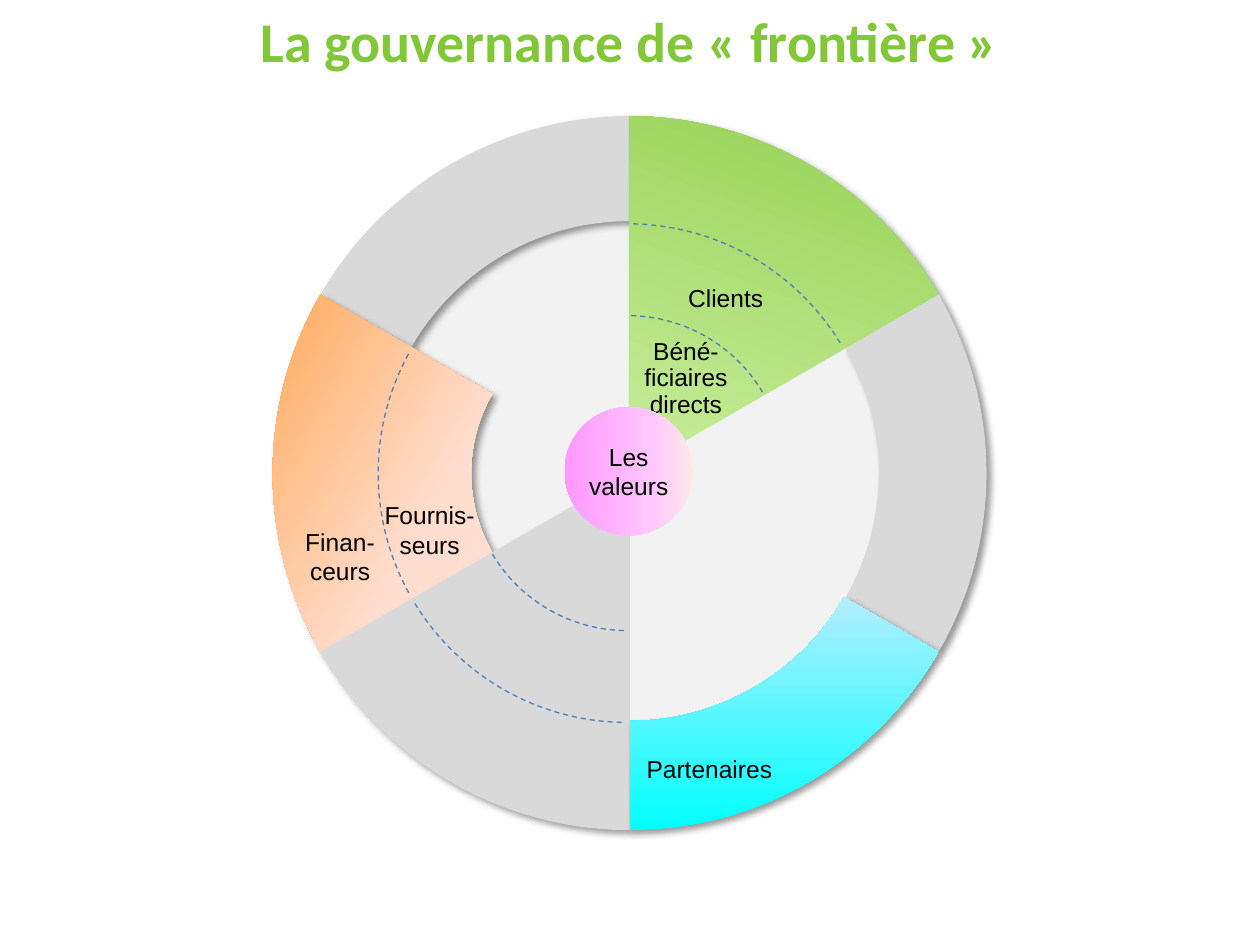
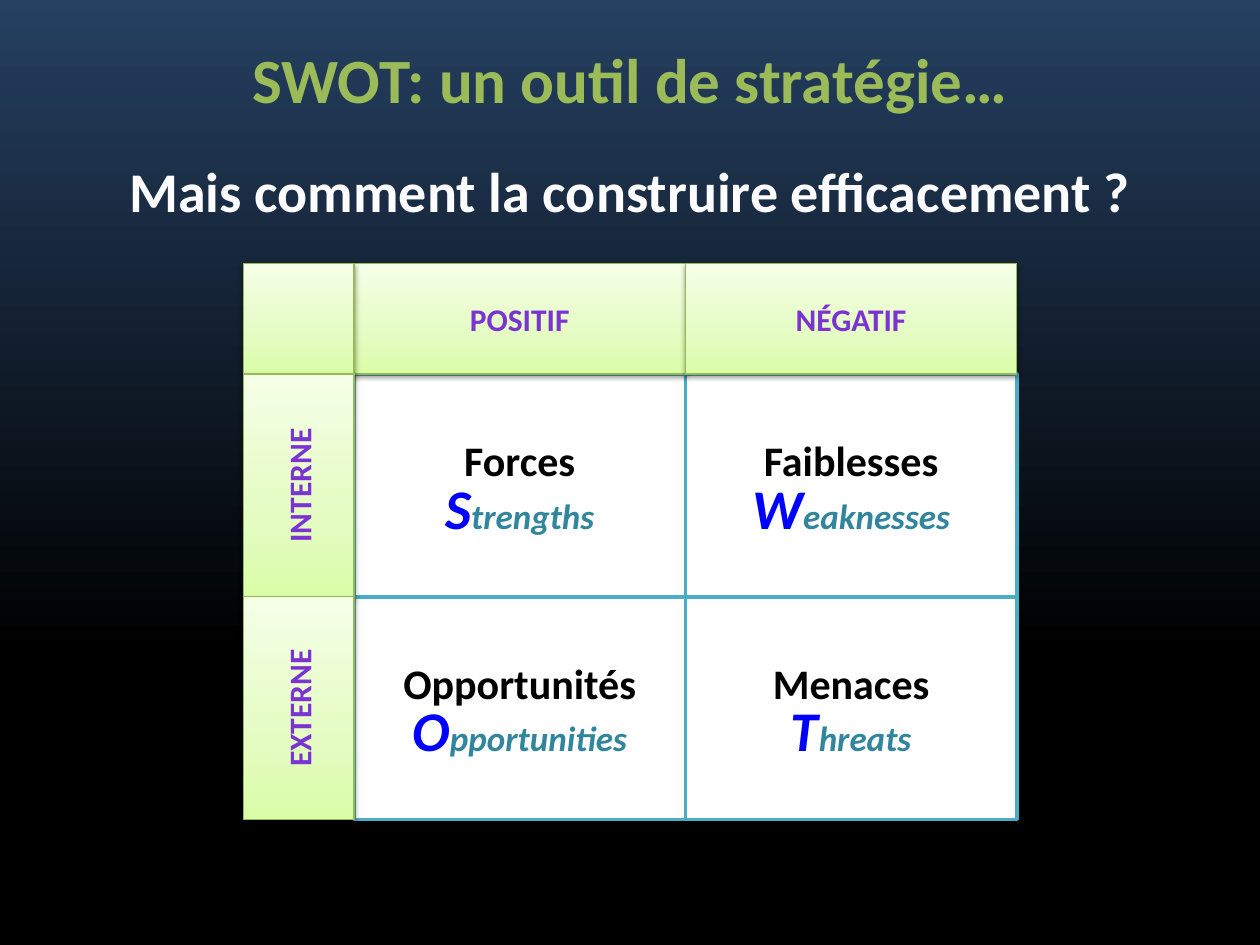
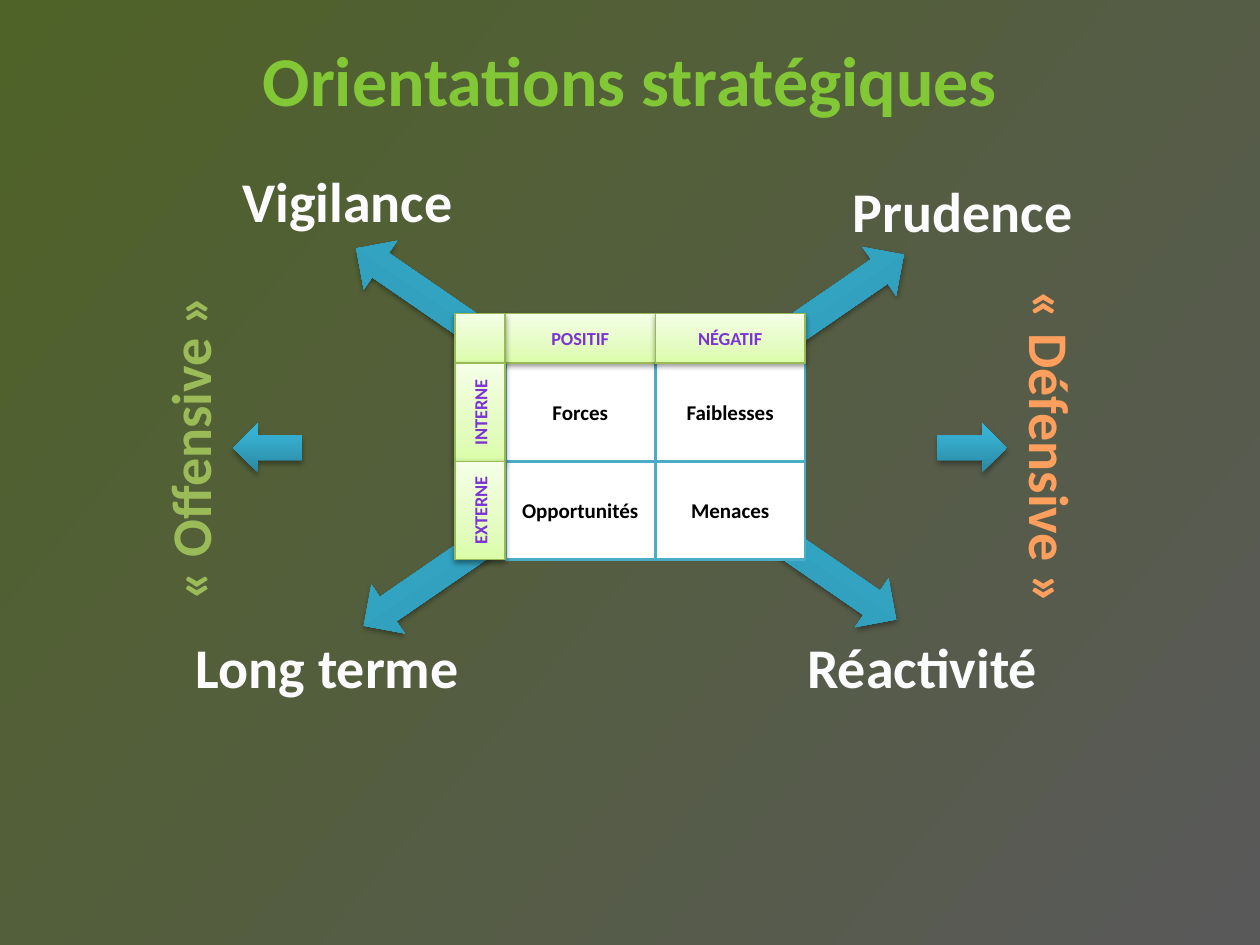
from dataclasses import dataclass

from lxml import etree
from pptx import Presentation
from pptx import util as u
from pptx.dml.color import RGBColor
from pptx.enum import dml, shapes, text
from pptx.oxml.ns import qn

SHAPE = shapes.MSO_SHAPE


# Theme: colours, gradients (stops, clockwise angle), shadows and type sizes
@dataclass(frozen=True)
class Theme:
    heading_font: str = "Calibri"
    label_font: str = "Arial"
    black: str = "000000"
    white: str = "FFFFFF"
    soft_white: str = "FCFCFF"
    lime: str = "82C836"
    olive: str = "9BBB59"
    orange: str = "FF9F5D"
    purple: str = "7B34D2"
    initial_blue: str = "0000FF"
    teal: str = "31859C"
    sector: str = "F2F2F2"
    rim: str = "D9D9D9"
    dash: str = "4B7EBC"
    quadrant_line: str = "4BACC6"
    header_line: str = "98B955"
    suppliers: tuple = (((0, "FF9933"), (35, "FFDED0"), (100, "FFF2ED")), 30)
    clients: tuple = (((0, "92D050"), (74, "E4FCC2"), (100, "F5FFE7")), 110)
    partners: tuple = (((0, "00FFFF"), (35, "C1EDFF"), (100, "E7F8FF")), 270)
    core: tuple = (((0, "FFE7E7"), (35, "FFC5FF"), (98, "FF99FF")), 180)
    header: tuple = (((0, "DAFDA7"), (35, "E4FCC2"), (100, "F5FFE7")), 270)
    arrow: tuple = (((0, "2A88A2"), (80, "37B1D2"), (100, "34B4D6")), 270)
    night: tuple = (((31, "000000"), (100, "254061")), 270)
    moss: tuple = (((0, "595959"), (100, "4F6228")), 220)
    # Shadows: opacity %, blur, distance, direction
    wheel_shadow: tuple = (40, 4, 3, 45)
    header_shadow: tuple = (38, 3.1, 1.6, 90)
    arrow_shadow: tuple = (35, 3.1, 1.8, 90)
    big: int = 32
    label: int = 14


T = Theme()


# Formatting helpers
def rgb(value):
    return RGBColor.from_string(value)


def paint(fill, owner, paint_spec):
    """Fill with a colour, a gradient or nothing."""
    if paint_spec is None:
        fill.background()
    elif isinstance(paint_spec, str):
        fill.solid()
        fill.fore_color.rgb = rgb(paint_spec)
    else:
        stops, angle = paint_spec
        fill.gradient()
        fill.gradient_angle = 360 - angle
        stop_list = next(owner.iter(qn("a:gsLst")))
        for stop in list(stop_list):
            stop_list.remove(stop)
        for position, colour in stops:
            stop = etree.SubElement(stop_list, qn("a:gs"), pos=str(position * 1000))
            etree.SubElement(stop, qn("a:srgbClr"), val=colour)


def cast_shadow(shape, opacity, blur, distance, direction):
    effects = shape._element.spPr.find(qn("a:effectLst"))
    shadow = etree.SubElement(
        effects, qn("a:outerShdw"), blurRad=str(u.Pt(blur)), dist=str(u.Pt(distance)),
        dir=str(direction * 60000), algn="ctr", rotWithShape="0")
    colour = etree.SubElement(shadow, qn("a:srgbClr"), val=T.black)
    etree.SubElement(colour, qn("a:alpha"), val=str(opacity * 1000))


def style_font(font, size, colour, name=T.heading_font, bold=True, italic=False):
    font.name, font.size, font.bold, font.italic = name, u.Pt(size), bold, italic
    font.color.rgb = rgb(colour)


def write(shape, words, size, colour, wrap=True, leading=None, **font):
    frame = shape.text_frame
    frame.word_wrap = wrap
    frame.vertical_anchor = text.MSO_ANCHOR.MIDDLE
    frame.text = words
    for paragraph in frame.paragraphs:
        paragraph.alignment = text.PP_ALIGN.CENTER
        if leading:
            paragraph.line_spacing = u.Pt(leading)
        style_font(paragraph.font, size, colour, **font)


# Elements
def add_figure(slide, kind, box, fill=None, line=None, shadow=None, adjust=()):
    figure = slide.shapes.add_shape(kind, *map(u.Pt, box))
    figure.shadow.inherit = False
    paint(figure.fill, figure._element, fill)
    if line:
        figure.line.color.rgb = rgb(line[0])
        figure.line.width = u.Pt(line[1])
    else:
        figure.line.fill.background()
    if shadow:
        cast_shadow(figure, *shadow)
    for index, value in enumerate(adjust):
        figure.adjustments[index] = value
    return figure


def add_words(slide, words, box, size, colour, rotation=0, **options):
    words_box = slide.shapes.add_textbox(*map(u.Pt, box))
    words_box.rotation = rotation
    write(words_box, words, size, colour, **options)
    return words_box


def add_slide(deck, title, size, colour, top, background):
    slide = deck.slides.add_slide(deck.slide_layouts[6])
    paint(slide.background.fill, slide._element, background)
    add_words(slide, title, (0, top, 720, 46), size, colour)
    return slide


def centred_square(centre, side):
    return centre[0] - side / 2, centre[1] - side / 2, side, side


def add_sector(slide, start, fill, thickness, dashes, labels):
    """One 60° sector: pale pie, coloured rim or pie, dashed arcs, labels."""
    disc = centred_square((359.8, 270.4), 408)
    # Preset angles count 60000 per degree; adjustments divide by 100000
    sweep = start * 0.6, (start + 60) % 360 * 0.6
    add_figure(slide, SHAPE.PIE, disc, T.sector, adjust=sweep)
    if thickness:
        add_figure(slide, SHAPE.BLOCK_ARC, disc, fill, shadow=T.wheel_shadow,
                   adjust=(*sweep, thickness))
    else:
        add_figure(slide, SHAPE.PIE, disc, fill, shadow=T.wheel_shadow, adjust=sweep)
    for diameter in dashes:
        inset_sweep = sweep[0] + 0.8, sweep[1] - 0.5
        arc = add_figure(slide, SHAPE.ARC, centred_square((358.6, 270.4), diameter),
                         line=(T.dash, 0.75), adjust=inset_sweep)
        arc.line.dash_style = dml.MSO_LINE.DASH
    for words, box, leading in labels:
        add_words(slide, words, box, T.label, T.black, wrap=False, leading=leading,
                  name=T.label_font, bold=False)


QUADRANTS = (("Forces", "Strengths"), ("Faiblesses", "Weaknesses"),
             ("Opportunités", "Opportunities"), ("Menaces", "Threats"))


def add_swot(slide, left, top, head, column, row, head_size, size, line, english):
    head_width, head_height = head
    xs = [left + head_width + i * column for i in range(2)]
    ys = [top + head_height + i * row for i in range(2)]
    cells = [(x, y, column, row) for y in ys for x in xs]

    # White quadrants
    for (french, _), cell in zip(QUADRANTS, cells):
        quadrant = add_figure(slide, SHAPE.RECTANGLE, cell, T.white, (T.quadrant_line, line))
        write(quadrant, french, size, T.black)
        if english:
            quadrant.text_frame.margin_bottom = u.Pt(32.9)

    # Green headers
    headers = [("POSITIF", (xs[0], top, column, head_height), False),
               ("NÉGATIF", (xs[1], top, column, head_height), False),
               ("", (left, top, head_width, head_height), False),
               ("INTERNE", (left, ys[0], head_width, row), True),
               ("EXTERNE", (left, ys[1], head_width, row), True)]
    for words, box, upright in headers:
        header = add_figure(slide, SHAPE.RECTANGLE, box, T.header, (T.header_line, 0.75),
                            T.header_shadow)
        if words:
            write(header, words, head_size, T.purple)
        if upright:
            header.text_frame._txBody.bodyPr.set("vert", "vert270")

    # English terms with a large initial
    if english:
        for (_, term), cell in zip(QUADRANTS, cells):
            term_box = add_words(slide, term[0], cell, T.big, T.initial_blue, italic=True)
            term_box.text_frame.margin_top = u.Pt(28)
            ending = term_box.text_frame.paragraphs[0].add_run()
            ending.text = term[1:]
            style_font(ending.font, 20, T.teal, italic=True)


# Slides
def governance_slide(deck):
    slide = add_slide(deck, "La gouvernance de « frontière »", T.big, T.lime, 0, T.white)
    outer, inner = 285, 180
    sectors = (
        (210, T.rim, 0.147, (), ()),
        (150, T.suppliers, 0.278, (outer,),
         (("Finan-\nceurs", (167, 297.4, 54.7, 41), None),
          ("Fournis-\nseurs", (212.4, 282.2, 66.2, 41), None))),
        (270, T.clients, None, (outer, inner),
         (("Clients", (385.9, 157.7, 57.6, 24.5), None),
          ("Béné-\vficiaires\vdirects", (360.7, 190.1, 62.6, 52.6), 15))),
        (330, T.rim, 0.151, (), ()),
        (90, T.rim, None, (outer, inner), ()),
        (30, T.partners, 0.153, (),
         (("Partenaires", (362.2, 427, 86.4, 24.5), None),)),
    )
    for sector in sectors:
        add_sector(slide, *sector)
    values = add_figure(slide, SHAPE.OVAL, centred_square((359.3, 269.3), 73.4), T.core)
    write(values, "Les valeurs", T.label, T.black, name=T.label_font, bold=False)
    values.text_frame.margin_left = values.text_frame.margin_right = 0


def swot_slide(deck):
    slide = add_slide(deck, "SWOT: un outil de stratégie…", 36, T.olive, 21.6, T.night)
    add_swot(slide, 139, 150.5, (63.3, 63.3), 189.4, 127.2, 18, 24, 2, True)
    add_words(slide, "Mais comment la construire efficacement ?", (0, 66.2, 720, 85),
              T.big, T.soft_white)


def orientations_slide(deck):
    slide = add_slide(deck, "Orientations stratégiques", 40, T.lime, 21.6, T.moss)

    # Diagonal arrows and the four corner postures
    for left, top, rotation in ((175, 234.7, 325.5), (170.6, 231.1, 34.5)):
        diagonal = add_figure(slide, SHAPE.LEFT_RIGHT_ARROW, (left, top, 374.4, 33.8),
                              T.arrow, shadow=T.arrow_shadow)
        diagonal.rotation = rotation
    for posture, left, top in (("Prudence", 450.7, 94.3), ("Long terme", 87.8, 355),
                               ("Vigilance", 99.4, 88.6), ("Réactivité", 427.7, 355)):
        add_words(slide, posture, (left, top, 198.7, 51), T.big, T.soft_white)

    add_swot(slide, 260, 179.3, (28.7, 28.1), 85.7, 56.2, 10.5, 12, 1.5, False)

    # Side stances
    stances = (("« Offensive »", 8.6, 270, T.olive, SHAPE.LEFT_ARROW, 133.2),
               ("« Défensive »", 501.8, 90, T.orange, SHAPE.RIGHT_ARROW, 535.7))
    for stance, left, rotation, colour, arrow, arrow_left in stances:
        add_words(slide, stance, (left, 230.4, 198.7, 51), T.big, colour, rotation)
        add_figure(slide, arrow, (arrow_left, 241.9, 39.6, 28.1), T.arrow,
                   shadow=T.arrow_shadow)


def main():
    deck = Presentation()
    deck.slide_width, deck.slide_height = u.Pt(720), u.Pt(540)
    governance_slide(deck)
    swot_slide(deck)
    orientations_slide(deck)
    deck.save("out.pptx")


if __name__ == "__main__":
    main()
